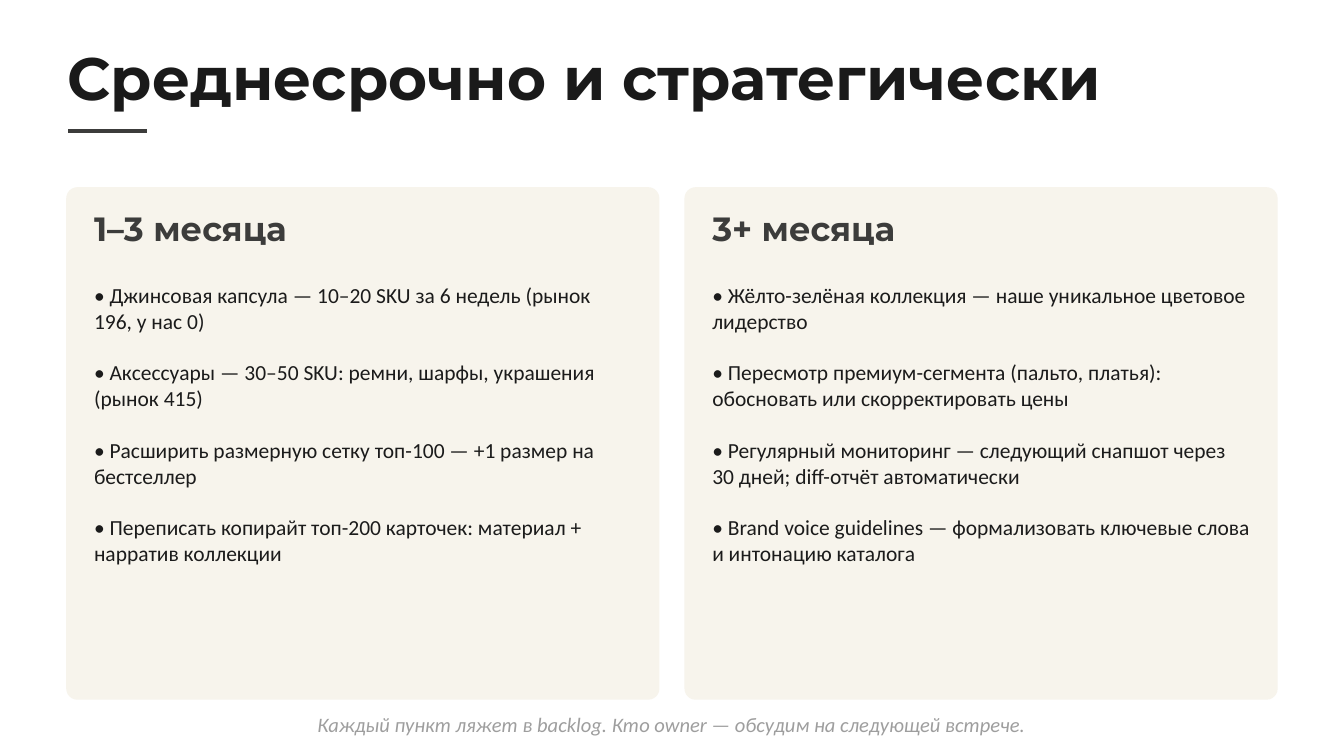
from pptx import Presentation
from pptx.dml.color import RGBColor
from pptx.enum.shapes import MSO_SHAPE
from pptx.enum.text import MSO_ANCHOR, MSO_AUTO_SIZE, PP_ALIGN
from pptx.util import Inches, Pt

HEX = {"white": "FFFFFF", "ink": "1A1A1A", "text": "1B1B1B",
       "dark": "3C3C3B", "cream": "F7F4EC", "gray": "9E9E9E"}
WIDE = Inches(10)
HIGH = WIDE * 9 // 16
UNIT = WIDE // 200

FORMS = {
    "title": {"name": "Montserrat", "size": Pt(32), "bold": True, "color": "ink"},
    "head": {"name": "Montserrat", "size": Pt(18), "bold": True, "color": "dark"},
    "body": {"name": "Calibri", "size": Pt(11.5), "color": "text"},
    "note": {"name": "Calibri", "size": Pt(11), "italic": True, "color": "gray"},
}
FRAME = {"margin_left": 0, "margin_top": 0, "margin_right": 0, "margin_bottom": 0,
         "word_wrap": True, "auto_size": MSO_AUTO_SIZE.NONE,
         "vertical_anchor": MSO_ANCHOR.TOP}

CARDS = [
    ("1–3 месяца", [
        "Джинсовая капсула — 10–20 SKU за 6 недель (рынок 196, у нас 0)",
        "Аксессуары — 30–50 SKU: ремни, шарфы, украшения (рынок 415)",
        "Расширить размерную сетку топ-100 — +1 размер на бестселлер",
        "Переписать копирайт топ-200 карточек: материал + нарратив коллекции",
    ]),
    ("3+ месяца", [
        "Жёлто-зелёная коллекция — наше уникальное цветовое лидерство",
        "Пересмотр премиум-сегмента (пальто, платья): обосновать или скорректировать цены",
        "Регулярный мониторинг — следующий снапшот через 30 дней; diff-отчёт автоматически",
        "Brand voice guidelines — формализовать ключевые слова и интонацию каталога",
    ]),
]


def shade(name):
    return RGBColor.from_string(HEX[name])


def grid(*cells):
    return [int(cell * UNIT) for cell in cells]


def style(font, form):
    for key, value in form.items():
        if key == "color":
            font.color.rgb = shade(value)
        else:
            setattr(font, key, value)


def fill_text(shape, lines, form, align=PP_ALIGN.LEFT, gap=0):
    frame = shape.text_frame
    for key, value in FRAME.items():
        setattr(frame, key, value)
    for i, line in enumerate(lines):
        para = frame.add_paragraph() if i else frame.paragraphs[0]
        para.alignment = align
        para.space_before = Pt(gap if i else 0)
        run = para.add_run()
        run.text = line
        style(run.font, FORMS[form])


def add_text(slide, box, lines, form, **kind):
    fill_text(slide.shapes.add_textbox(*grid(*box)), lines, form, **kind)


def add_block(slide, preset, box, fill, line):
    block = slide.shapes.add_shape(preset, *grid(*box))
    block.shadow.inherit = False
    block.fill.solid()
    block.fill.fore_color.rgb = shade(fill)
    block.line.color.rgb = shade(line)
    block.line.width = Pt(1)
    return block


def add_header(slide, box, text):
    left, top, wide, high = box
    title = slide.shapes.title
    title.left, title.top, title.width, title.height = grid(*box)
    fill_text(title, [text], "title")
    add_block(slide, MSO_SHAPE.RECTANGLE, (left, top + high + 1, 12, 1), "dark", "white")


def add_card(slide, box, head, items):
    left, top, wide, high = box
    card = add_block(slide, MSO_SHAPE.ROUNDED_RECTANGLE, box, "cream", "cream")
    card.adjustments[0] = 0.02
    pad = 4
    inner = wide - 2 * pad
    add_text(slide, (left + pad, top + 3, inner, 8), [head], "head")
    add_text(slide, (left + pad, top + 14, inner, high - 18),
             [f"• {item}" for item in items], "body", gap=13.8)


def add_cards(slide, box, cards, gap):
    left, top, wide, high = box
    size = (wide - gap * (len(cards) - 1)) / len(cards)
    for i, (head, items) in enumerate(cards):
        add_card(slide, (left + i * (size + gap), top, size, high), head, items)


def add_note(slide, box, text):
    add_text(slide, box, [text], "note", align=PP_ALIGN.CENTER)


def main():
    deck = Presentation()
    deck.slide_width, deck.slide_height = WIDE, HIGH
    slide = deck.slides.add_slide(deck.slide_layouts[5])
    slide.background.fill.solid()
    slide.background.fill.fore_color.rgb = shade("white")
    add_header(slide, (10, 6, 180, 12), "Среднесрочно и стратегически")
    add_cards(slide, (10, 28, 180, 76), CARDS, gap=4)
    add_note(slide, (10, 106, 180, 6),
             "Каждый пункт ляжет в backlog. Кто owner — обсудим на следующей встрече.")
    deck.save("out.pptx")


if __name__ == "__main__":
    main()
